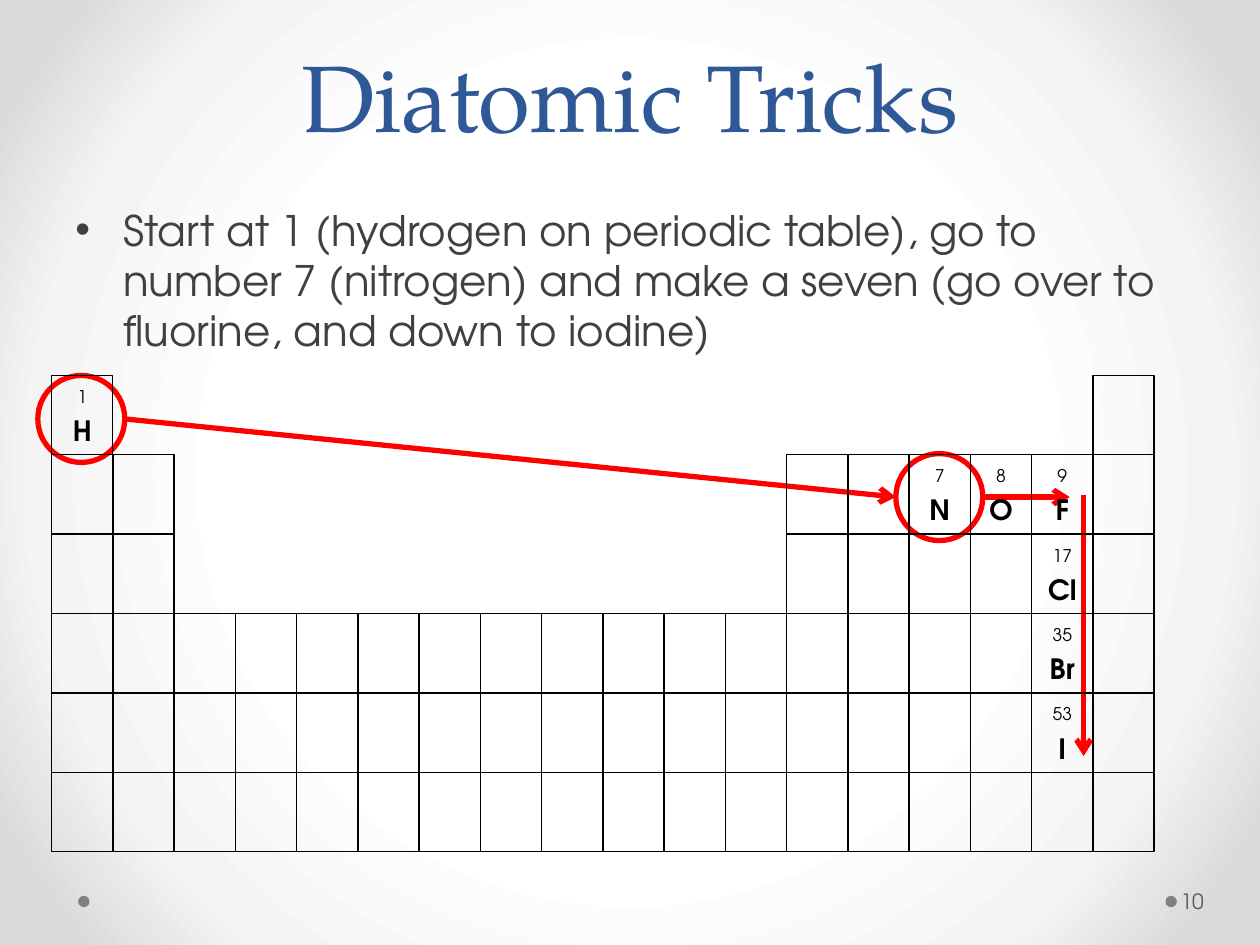
import pptx
import pptx.dml.color
import pptx.enum.shapes
import pptx.enum.text
import pptx.oxml
import pptx.oxml.ns
import pptx.util
from lxml import etree

Inches = pptx.util.Inches
Pt = pptx.util.Pt
RGB = pptx.dml.color.RGBColor
Shape = pptx.enum.shapes.MSO_SHAPE
Anchor = pptx.enum.text.MSO_ANCHOR
Align = pptx.enum.text.PP_ALIGN
Fit = pptx.enum.text.MSO_AUTO_SIZE
qn = pptx.oxml.ns.qn

BLUE = RGB(0x2F, 0x58, 0x97)
DARK = RGB(0x40, 0x40, 0x40)
GREY = RGB(0x59, 0x59, 0x59)
DOT = RGB(0x80, 0x80, 0x80)
RED = RGB(0xFF, 0x00, 0x00)
BLACK = RGB(0x00, 0x00, 0x00)
SANS = "TeX Gyre Adventor"
SERIF = "TeX Gyre Pagella"
STOPS = [(50, "FFFFFF"), (76, "F4F4F4"), (92, "DADADA")]

FULL = range(18)
SPLIT = [0, 1, *range(12, 18)]
ROWS = [[0, 17], SPLIT, SPLIT, FULL, FULL, FULL]
ATOMS = [
    (0, 0, "1", "H"), (1, 14, "7", "N"), (1, 15, "8", "O"), (1, 16, "9", "F"),
    (2, 16, "17", "Cl"), (3, 16, "35", "Br"), (4, 16, "53", "I"),
]


def inch(box):
    """Turn a box of numbers into lengths."""
    return [Inches(side) for side in box]


def style(para, face, size, tint, bold=False):
    """Format the runs of a paragraph."""
    for run in para.runs:
        run.font.name = face
        run.font.size = Pt(size)
        run.font.bold = bold
        run.font.color.rgb = tint


def add_text(slide, box, text):
    """Add a wrapped text box and return its frame."""
    frame = slide.shapes.add_textbox(*inch(box)).text_frame
    frame.word_wrap = True
    frame.text = text
    return frame


def add_form(slide, kind, box, fill=None, line=None, width=0.75):
    """Add a flat shape with an optional fill and line."""
    form = slide.shapes.add_shape(kind, *inch(box))
    form.shadow.inherit = False
    if fill is None:
        form.fill.background()
    else:
        form.fill.solid()
        form.fill.fore_color.rgb = fill
    if line is None:
        form.line.fill.background()
    else:
        form.line.color.rgb = line
        form.line.width = Pt(width)


def add_arrow(slide, start, end):
    """Add a red arrow between two points."""
    arrow = slide.shapes.add_connector(
        pptx.enum.shapes.MSO_CONNECTOR.STRAIGHT, *inch(start + end))
    arrow.line.color.rgb = RED
    arrow.line.width = Pt(3)
    etree.SubElement(arrow.line._get_or_add_ln(), qn("a:tailEnd"), type="arrow")
    etree.SubElement(arrow._element.spPr, qn("a:effectLst"))


def paint_back(slide):
    """Give the slide a round gradient."""
    stops = "".join(
        f'<a:gs pos="{pos * 1000}"><a:srgbClr val="{tint}"/></a:gs>'
        for pos, tint in STOPS)
    back = pptx.oxml.parse_xml(
        f'<p:bg {pptx.oxml.ns.nsdecls("p", "a")}><p:bgPr><a:gradFill>'
        f'<a:gsLst>{stops}</a:gsLst><a:path path="circle">'
        '<a:fillToRect l="50000" t="50000" r="50000" b="50000"/></a:path>'
        '</a:gradFill><a:effectLst/></p:bgPr></p:bg>')
    slide.element.find(qn("p:cSld")).insert(0, back)


def set_title(slide, box):
    """Place and format the title."""
    title = slide.shapes.title
    title.left, title.top, title.width, title.height = inch(box)
    frame = title.text_frame
    frame.text = "Diatomic Tricks"
    frame.auto_size = Fit.NONE
    frame.vertical_anchor = Anchor.BOTTOM
    para = frame.paragraphs[0]
    para.alignment = Align.CENTER
    para.line_spacing = Pt(58)
    style(para, SERIF, 54, BLUE)


def add_body(slide, box):
    """Add the bullet text."""
    frame = add_text(
        slide, box,
        "Start at 1 (hydrogen on periodic table), go to number 7 (nitrogen) "
        "and make a seven (go over to fluorine, and down to iodine)")
    para = frame.paragraphs[0]
    para.space_before = Pt(4.8)
    style(para, SANS, 24, DARK)
    props = para._p.get_or_add_pPr()
    props.set("marL", str(Inches(0.38)))
    props.set("indent", str(Inches(-0.38)))
    etree.SubElement(props, qn("a:buFont"), typeface="Arial")
    etree.SubElement(props, qn("a:buChar"), char="•")


def add_label(slide, box, count, sign):
    """Add the number and symbol of an atom."""
    frame = add_text(slide, box, f"{count}\n{sign}")
    frame.margin_left = frame.margin_right = 0
    for para, size, bold in zip(frame.paragraphs, (10, 16), (False, True)):
        para.alignment = Align.CENTER
        para.line_spacing = 1.2
        style(para, SANS, size, BLACK, bold)


def add_grid(slide, box):
    """Draw the cells and labels of the table."""
    left, top, width, height = box
    wide, high = width / len(FULL), height / len(ROWS)

    def cell(row, col):
        """Return the box of one cell."""
        return left + col * wide, top + row * high, wide, high

    for row, cols in enumerate(ROWS):
        for col in cols:
            add_form(slide, Shape.RECTANGLE, cell(row, col), line=BLACK)
    for row, col, count, sign in ATOMS:
        add_label(slide, cell(row, col), count, sign)


def add_trail(slide, box):
    """Draw the rings and the arrows that make a seven."""
    left, top, width, height = box
    ring = 0.69
    half = ring / 2
    drop = 0.62
    next_x = left + 6.81
    for x, y in ((left, top), (next_x, top + drop)):
        add_form(slide, Shape.OVAL, (x, y, ring, ring), line=RED, width=3)
    mid = top + drop + half
    add_arrow(slide, (left + ring, top + half), (next_x, mid))
    add_arrow(slide, (next_x + ring, mid), (next_x + 2 * ring, mid))
    add_arrow(slide, (left + width, mid - 0.02), (left + width, top + height))


def add_foot(slide, box):
    """Add the dots and the page number."""
    left, top, width, height = box
    size = 0.09
    for x in (left, left + 8.63):
        add_form(slide, Shape.OVAL, (x, top + 0.16, size, size), fill=DOT)
    frame = add_text(slide, (left + width - 0.61, top, 0.61, height), "10")
    frame.vertical_anchor = Anchor.MIDDLE
    frame.margin_left = Inches(0.03)
    frame.margin_right = Inches(0.05)
    style(frame.paragraphs[0], SANS, 12, GREY)


def main():
    """Build and save the deck."""
    deck = pptx.Presentation()
    deck.slide_width, deck.slide_height = Inches(10), Inches(7.5)
    slide = deck.slides.add_slide(deck.slide_layouts[5])
    paint_back(slide)
    set_title(slide, (0.5, 0.04, 9, 1.21))
    add_body(slide, (0.5, 1.57, 9, 4.95))
    add_trail(slide, (0.3, 2.98, 8.3, 3.02))
    add_grid(slide, (0.41, 2.98, 8.75, 3.78))
    add_foot(slide, (0.62, 6.95, 9.33, 0.4))
    deck.save("out.pptx")


if __name__ == "__main__":
    main()
